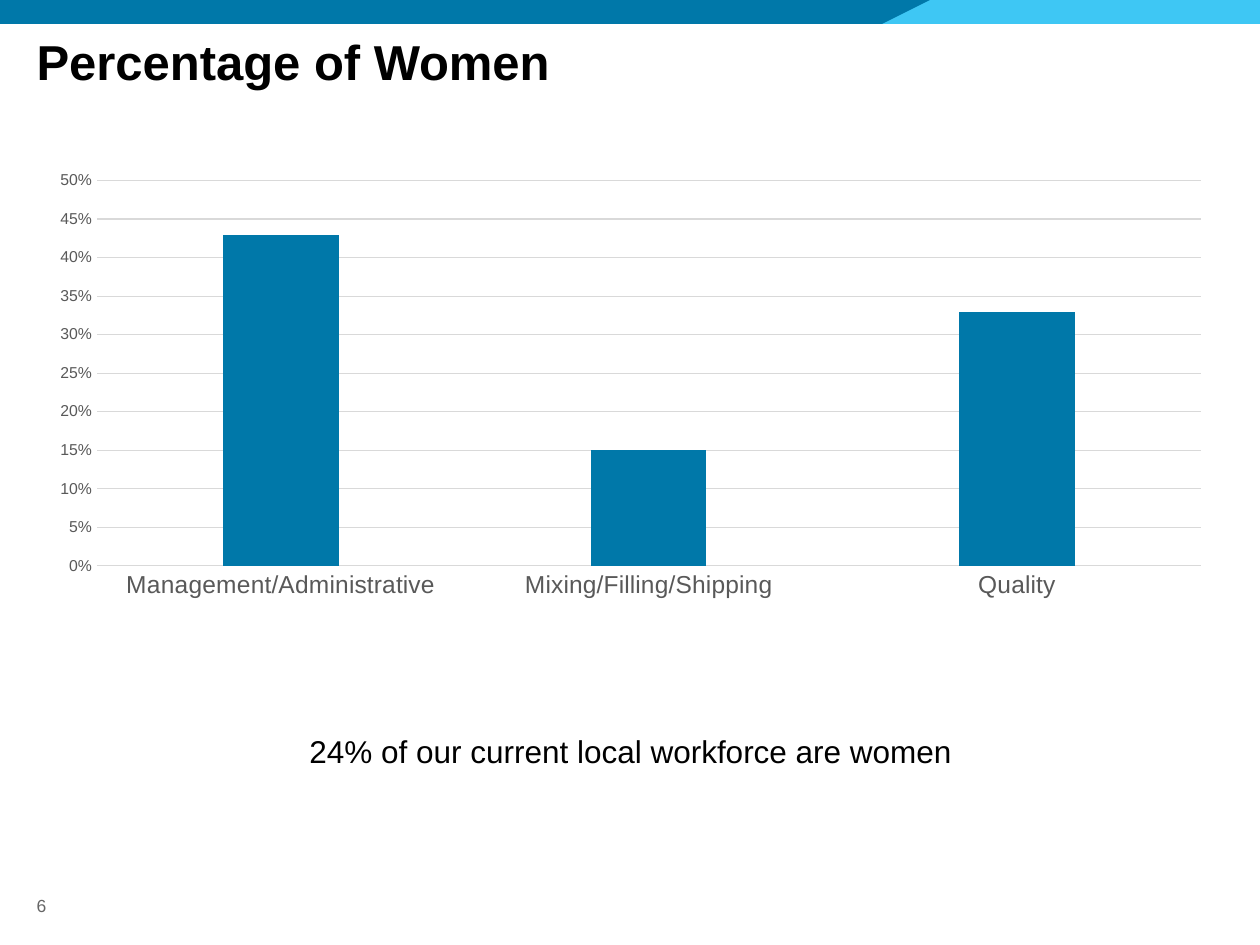
from pptx import Presentation
from pptx import util as u
from pptx.chart.data import CategoryChartData
from pptx.dml.color import RGBColor
from pptx.enum import chart as ch, shapes, text

BLUE = RGBColor(0x00, 0x78, 0xA9)
SKY = RGBColor(0x3E, 0xC7, 0xF4)
BLACK = RGBColor(0, 0, 0)
GREY = RGBColor(0x59, 0x59, 0x59)
NUMBER_GREY = RGBColor(0x66, 0x66, 0x66)
RULE = RGBColor(0xD9, 0xD9, 0xD9)
FONT = "Arial"
COLS, ROWS = 100, 75
MARGIN, CONTENT = 2.9, 94.3
BAND = 1.9


def style_font(font, size, color, bold=False):
    font.name, font.size, font.bold = FONT, u.Pt(size), bold
    font.color.rgb = color


def write(sp, words, size=18, color=BLACK, bold=False,
          align=text.PP_ALIGN.LEFT, inset=0):
    tf = sp.text_frame
    tf.word_wrap = True
    tf.auto_size = text.MSO_AUTO_SIZE.NONE
    tf.vertical_anchor = text.MSO_ANCHOR.TOP
    tf.margin_left = tf.margin_right = u.Inches(2 * inset)
    tf.margin_top = tf.margin_bottom = u.Inches(inset)
    p = tf.paragraphs[0]
    p.alignment = align
    r = p.add_run()
    r.text = words
    style_font(r.font, size, color, bold)


class Deck:
    def __init__(self):
        self.prs = Presentation()
        self.prs.slide_width, self.prs.slide_height = u.Inches(10), u.Inches(7.5)
        self.s = self.prs.slides.add_slide(self.prs.slide_layouts[5])

    def x(self, col):
        return round(self.prs.slide_width * col / COLS)

    def y(self, row):
        return round(self.prs.slide_height * row / ROWS)

    def box(self, col, row, cols, rows):
        return self.x(col), self.y(row), self.x(cols), self.y(rows)

    def paint(self, sp, color):
        sp.shadow.inherit = False
        sp.fill.solid()
        sp.fill.fore_color.rgb = color
        sp.line.fill.background()

    def rect(self, color, *area):
        sp = self.s.shapes.add_shape(shapes.MSO_SHAPE.RECTANGLE, *self.box(*area))
        self.paint(sp, color)

    def outline(self, color, *points):
        start, *rest = [(self.x(col), self.y(row)) for col, row in points]
        fb = self.s.shapes.build_freeform(*start)
        fb.add_line_segments(rest, close=True)
        self.paint(fb.convert_to_shape(), color)

    def title(self, words, *area):
        sp = self.s.shapes.title
        sp.left, sp.top, sp.width, sp.height = self.box(*area)
        write(sp, words, size=28, bold=True)

    def text(self, words, *area, **style):
        write(self.s.shapes.add_textbox(*self.box(*area)), words, **style)

    def columns(self, values, *area):
        data = CategoryChartData(number_format="0%")
        data.categories = list(values)
        data.add_series("Series 1", list(values.values()))
        chart = self.s.shapes.add_chart(
            ch.XL_CHART_TYPE.COLUMN_CLUSTERED, *self.box(*area), data).chart
        chart.has_legend = chart.has_title = False
        style_font(chart.font, 10, BLACK)
        plot = chart.plots[0]
        plot.gap_width, plot.overlap, plot.vary_by_categories = 219, -27, False
        series = plot.series[0]
        series.format.fill.solid()
        series.format.fill.fore_color.rgb = BLUE
        cat, val = chart.category_axis, chart.value_axis
        for axis, size in ((cat, 14), (val, 9)):
            axis.major_tick_mark = axis.minor_tick_mark = ch.XL_TICK_MARK.NONE
            style_font(axis.tick_labels.font, size, GREY)
        val.minimum_scale, val.maximum_scale, val.major_unit = 0, 0.5, 0.05
        val.tick_labels.number_format = "0%"
        val.tick_labels.number_format_is_linked = False
        val.format.line.fill.background()
        for line in (cat.format.line, val.major_gridlines.format.line):
            line.color.rgb, line.width = RULE, u.Pt(0.75)


def main():
    d = Deck()
    d.rect(SKY, 68.4, 0, COLS - 68.4, BAND)
    d.outline(BLUE, (0, 0), (73.8, 0), (70, BAND), (0, BAND))
    d.text("6", MARGIN, 71, 4.6, BAND, size=10, color=NUMBER_GREY)
    d.title("Percentage of Women", MARGIN, 2.5, CONTENT, 9.4)
    d.columns({"Management/Administrative": 0.43,
               "Mixing/Filling/Shipping": 0.15,
               "Quality": 0.33}, MARGIN, 12.9, CONTENT, 35.3)
    d.text("24% of our current local workforce are women", 20.8, 57.6, 58.5, 4,
           align=text.PP_ALIGN.CENTER, inset=0.05)
    d.prs.save("out.pptx")


if __name__ == "__main__":
    main()
